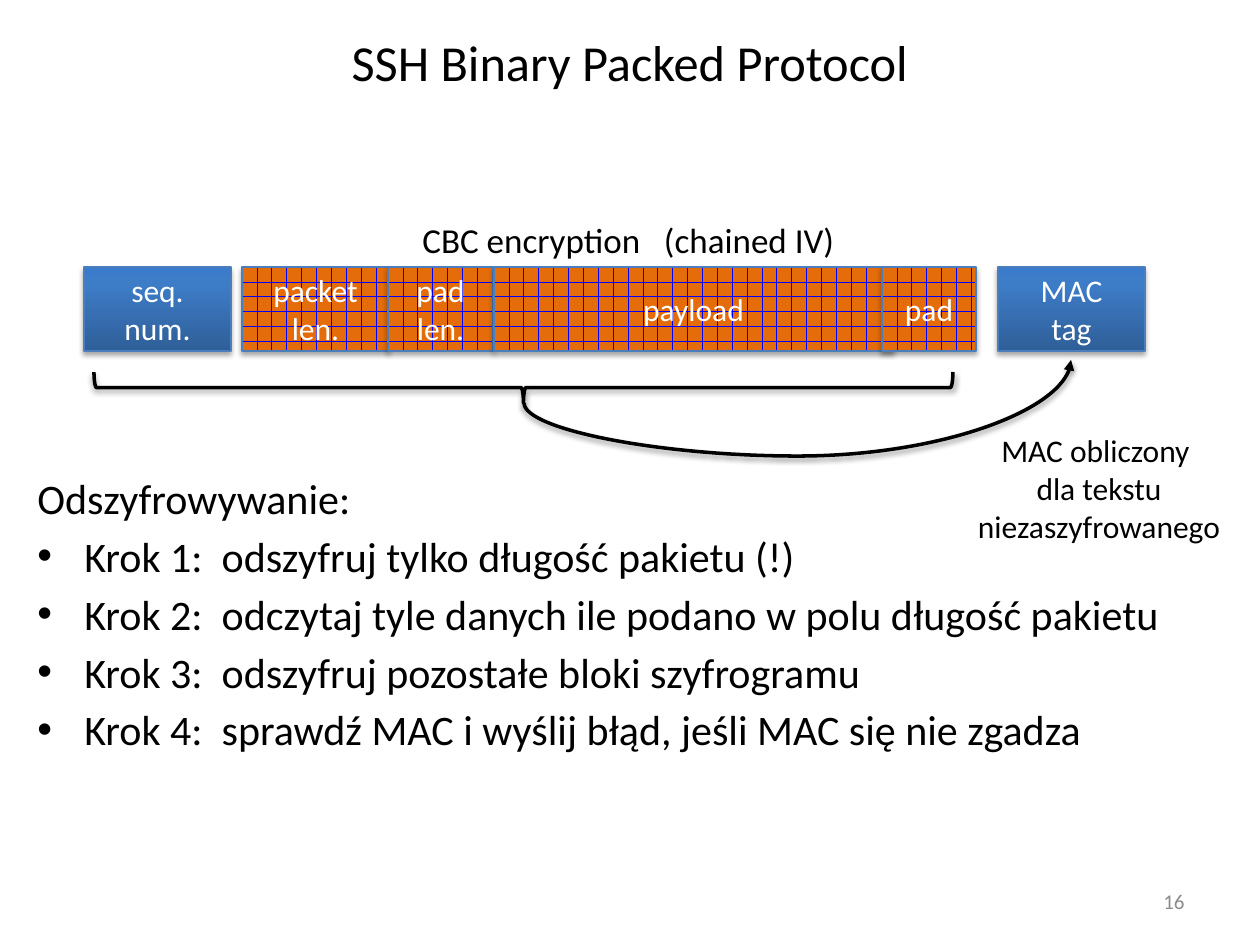
from dataclasses import dataclass

from lxml.etree import SubElement
from pptx import Presentation
from pptx.dml.color import RGBColor
from pptx.enum.dml import MSO_PATTERN
from pptx.enum.shapes import MSO_CONNECTOR, MSO_SHAPE
from pptx.enum.text import MSO_ANCHOR as Anchor, PP_ALIGN as Align
from pptx.oxml.ns import qn
from pptx.util import Emu, Pt


@dataclass(frozen=True)
class Theme:
    font: str = "Calibri"
    ink: str = "000000"
    light: str = "FFFFFF"
    muted: str = "8C8C8C"
    border: str = "4B7EBC"
    brick: str = "E46C0A"
    mortar: str = "0000FF"
    gradient: tuple = ((0, "2F5F99"), (80, "3D7CC7"), (100, "3A7CCB"))
    title: float = 28.8
    body: int = 24
    caption: int = 20
    label: int = 18
    number: int = 12


THEME = Theme()
SCALE = 914400 / 126
SLIDE_SIZE = (1260, 945)
FIELD_TOP, FIELD_HEIGHT = 267, 84

TITLE = "SSH Binary Packed Protocol"
CAPTION = "CBC encryption   (chained IV)"
MAC_NOTE = "MAC obliczony \ndla tekstu\nniezaszyfrowanego"
HEADING = "Odszyfrowywanie:"
STEPS = [
    "Krok 1:  odszyfruj tylko długość pakietu (!)",
    "Krok 2:  odczytaj tyle danych ile podano w polu długość pakietu",
    "Krok 3:  odszyfruj pozostałe bloki szyfrogramu",
    "Krok 4:  sprawdź MAC i wyślij błąd, jeśli MAC się nie zgadza",
]
FIELDS = [
    (["seq.", "num."], 84, 147, False),
    (["packet", "len."], 242, 147, True),
    (["pad", "len."], 388, 105, True),
    (["payload"], 494, 399, True),
    (["pad"], 882, 94, True),
    (["MAC", "tag"], 998, 147, False),
]


def px(value):
    return Emu(round(value * SCALE))


def box(*lengths):
    return [px(length) for length in lengths]


def rgb(value):
    return RGBColor.from_string(value)


def write(shape, paragraphs, size, color=THEME.ink, align=Align.LEFT,
          anchor=Anchor.TOP, wrap=True, before=0):
    frame = shape.text_frame
    frame.word_wrap = wrap
    frame.vertical_anchor = anchor
    for index, text in enumerate(paragraphs):
        paragraph = frame.add_paragraph() if index else frame.paragraphs[0]
        paragraph.text = text
        paragraph.alignment = align
        paragraph.space_before = Pt(before)
        for run in paragraph.runs:
            run.font.name = THEME.font
            run.font.size = Pt(size)
            run.font.color.rgb = rgb(color)
    return frame


def add_text(slide, place, paragraphs, size, **style):
    return write(slide.shapes.add_textbox(*box(*place)), paragraphs, size, **style)


def add_bullet(paragraph, indent):
    properties = paragraph._p.get_or_add_pPr()
    properties.set("marL", str(px(indent)))
    properties.set("indent", str(-px(indent)))
    SubElement(properties, qn("a:buFont"), typeface="Arial")
    SubElement(properties, qn("a:buChar"), char="•")


def add_shadow(shape, opacity, distance):
    effects = SubElement(shape._element.spPr, qn("a:effectLst"))
    shadow = SubElement(effects, qn("a:outerShdw"), blurRad=str(Pt(3.1)),
                        dist=str(Pt(distance)), dir="5400000", rotWithShape="0")
    color = SubElement(shadow, qn("a:srgbClr"), val=THEME.ink)
    SubElement(color, qn("a:alpha"), val=str(opacity * 1000))


def set_line(shape, color, width):
    shape.line.color.rgb = rgb(color)
    shape.line.width = Pt(width)


def fill_gradient(shape):
    shape.fill.gradient()
    gradient = shape._element.spPr.find(qn("a:gradFill"))
    for child in list(gradient):
        gradient.remove(child)
    stops = SubElement(gradient, qn("a:gsLst"))
    for position, color in THEME.gradient:
        stop = SubElement(stops, qn("a:gs"), pos=str(position * 1000))
        SubElement(stop, qn("a:srgbClr"), val=color)
    SubElement(gradient, qn("a:lin"), ang="16200000", scaled="0")


def fill_brick(shape):
    shape.fill.patterned()
    shape.fill.pattern = MSO_PATTERN.HORIZONTAL_BRICK
    shape.fill.fore_color.rgb = rgb(THEME.mortar)
    shape.fill.back_color.rgb = rgb(THEME.brick)


def add_field(slide, lines, left, width, encrypted):
    shape = slide.shapes.add_shape(
        MSO_SHAPE.RECTANGLE, *box(left, FIELD_TOP, width, FIELD_HEIGHT))
    (fill_brick if encrypted else fill_gradient)(shape)
    set_line(shape, THEME.border, 0.75)
    add_shadow(shape, 35, 1.8)
    write(shape, lines, THEME.label, color=THEME.light,
          align=Align.CENTER, anchor=Anchor.MIDDLE)


def add_mac_scope(slide):
    brace = slide.shapes.add_shape(MSO_SHAPE.LEFT_BRACE, *box(508, -42, 31, 859))
    brace.rotation = 270
    brace.fill.background()

    curve = slide.shapes.add_connector(MSO_CONNECTOR.CURVE, *box(819, 655, 776, 108))
    properties = curve._element.spPr
    properties.find(qn("a:xfrm")).set("rot", "5400000")
    geometry = properties.find(qn("a:prstGeom"))
    for child in list(geometry):
        geometry.remove(child)
    adjustments = SubElement(geometry, qn("a:avLst"))
    SubElement(adjustments, qn("a:gd"), name="adj1", fmla="val -123500")

    for shape in (brace, curve):
        set_line(shape, THEME.ink, 2)
        add_shadow(shape, 38, 1.6)
    SubElement(properties.find(qn("a:ln")), qn("a:tailEnd"), type="triangle")
    slide.shapes.add_group_shape([brace, curve])


def main():
    presentation = Presentation()
    presentation.slide_width, presentation.slide_height = box(*SLIDE_SIZE)
    slide = presentation.slides.add_slide(presentation.slide_layouts[6])

    add_text(slide, (63, 27, 1134, 68), [TITLE], THEME.title,
             align=Align.CENTER, anchor=Anchor.MIDDLE)
    add_text(slide, (903, 876, 294, 50), ["16"], THEME.number, color=THEME.muted,
             align=Align.RIGHT, anchor=Anchor.MIDDLE)
    steps = add_text(slide, (25, 466, 1221, 334), [HEADING, *STEPS], THEME.body,
                     before=4.3)
    for paragraph in steps.paragraphs[1:]:
        add_bullet(paragraph, 47)

    for field in FIELDS:
        add_field(slide, *field)
    add_text(slide, (410, 212, 441, 55), [CAPTION], THEME.caption, wrap=False)
    add_mac_scope(slide)
    add_text(slide, (963, 425, 272, 127), [MAC_NOTE], THEME.label,
             align=Align.CENTER, wrap=False)

    presentation.save("out.pptx")


if __name__ == "__main__":
    main()
